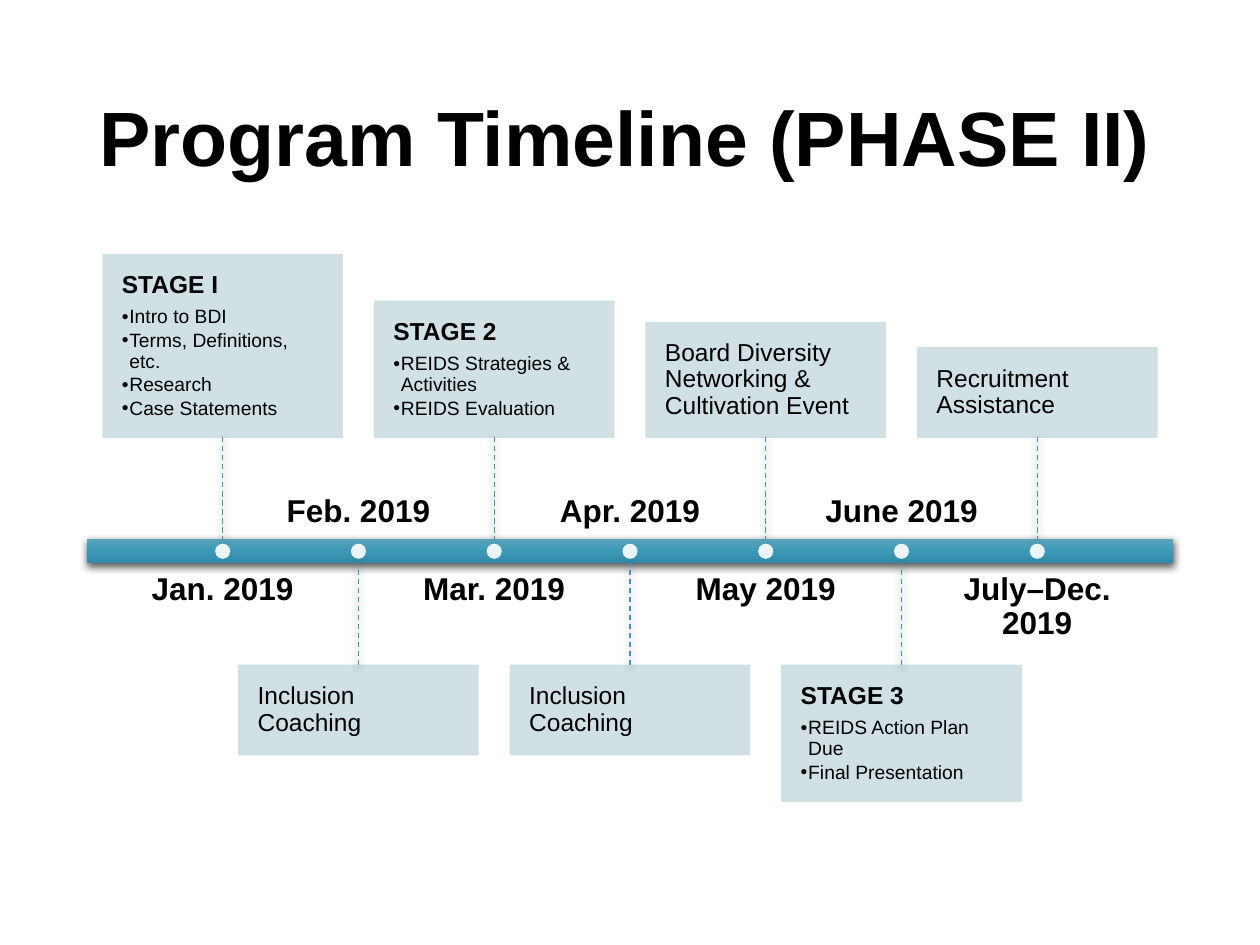
from copy import deepcopy

from pptx import Presentation
from pptx.dml.color import RGBColor
from pptx.enum.dml import MSO_LINE
from pptx.enum.shapes import MSO_CONNECTOR, MSO_SHAPE
from pptx.enum.text import MSO_ANCHOR, MSO_AUTO_SIZE, PP_ALIGN
from pptx.oxml import parse_xml
from pptx.oxml.ns import nsdecls, qn
from pptx.oxml.xmlchemy import OxmlElement
from pptx.util import Inches, Pt

RECT, OVAL = MSO_SHAPE.RECTANGLE, MSO_SHAPE.OVAL
STRAIGHT, DASH = MSO_CONNECTOR.STRAIGHT, MSO_LINE.DASH
TOP, MIDDLE, BOTTOM = MSO_ANCHOR.TOP, MSO_ANCHOR.MIDDLE, MSO_ANCHOR.BOTTOM
LEFT, CENTER = PP_ALIGN.LEFT, PP_ALIGN.CENTER

BLACK = RGBColor(0x00, 0x00, 0x00)
WHITE = RGBColor(0xFF, 0xFF, 0xFF)
CARD = RGBColor(0xCD, 0xDD, 0xE3)
STEM = RGBColor(0x42, 0x97, 0xB2)
BAR_STOPS = [(0, RGBColor(0x5C, 0xA2, 0xBB)),
             (0.5, RGBColor(0x3B, 0x99, 0xB7)),
             (1, RGBColor(0x2F, 0x89, 0xA7))]
FONT = "Arial"

BAR_X, BAR_Y, BAR_W, BAR_H = 0.69, 4.28, 8.62, 0.19
CARD_W, STEM_H, DOT = 1.9, 0.81, 0.12
LABEL_W, LABEL_H, LABEL_GAP = 1.73, 0.54, 0.08

# Date, card height, card heading, bullets; even entries stand above the bar
EVENTS = [
    ("Jan. 2019", 1.45, "STAGE I", ["Intro to BDI", "Terms, Definitions, etc.",
                                    "Research", "Case Statements"]),
    ("Feb. 2019", 0.71, "Inclusion Coaching", []),
    ("Mar. 2019", 1.08, "STAGE 2", ["REIDS Strategies & Activities",
                                    "REIDS Evaluation"]),
    ("Apr. 2019", 0.71, "Inclusion Coaching", []),
    ("May 2019", 0.91, "Board Diversity Networking & Cultivation Event", []),
    ("June 2019", 1.08, "STAGE 3", ["REIDS Action Plan Due",
                                    "Final Presentation"]),
    ("July–Dec. 2019", 0.71, "Recruitment Assistance", []),
]


def set_frame(tf, anchor, side, end):
    tf.word_wrap = True
    tf.auto_size = MSO_AUTO_SIZE.NONE
    tf.vertical_anchor = anchor
    tf.margin_left = tf.margin_right = Inches(side)
    tf.margin_top = tf.margin_bottom = Inches(end)


def write(p, text, size, bold=False, align=LEFT):
    p.text = text
    p.alignment = align
    p.line_spacing = 0.9
    font = p.runs[0].font
    font.name, font.size, font.bold = FONT, Pt(size), bold
    font.color.rgb = BLACK


def add_bullet(p):
    pPr = p._p.get_or_add_pPr()
    pPr.set("marL", str(Inches(0.06)))
    pPr.set("indent", str(Inches(-0.08)))
    color = OxmlElement("a:buClr")
    rgb = OxmlElement("a:srgbClr")
    rgb.set("val", str(BLACK))
    color.append(rgb)
    font = OxmlElement("a:buFont")
    font.set("typeface", FONT)
    bullet = OxmlElement("a:buChar")
    bullet.set("char", "•")
    pPr.extend([color, font, bullet])


def set_alpha(fill):
    """Make a solid fill 90% opaque."""
    alpha = OxmlElement("a:alpha")
    alpha.set("val", "90000")
    fill._xPr.find(qn("a:solidFill"))[0].append(alpha)


def add_shadow(shape):
    shape._element.spPr.append(parse_xml(
        f'<a:effectLst {nsdecls("a")}><a:outerShdw blurRad="{Pt(4.5)}" '
        f'dist="{Pt(1.5)}" dir="5400000" rotWithShape="0">'
        '<a:srgbClr val="000000"><a:alpha val="63000"/></a:srgbClr>'
        '</a:outerShdw></a:effectLst>'))


def add_plain(slide, kind, x, y, w, h, color):
    s = slide.shapes.add_shape(kind, Inches(x), Inches(y), Inches(w), Inches(h))
    s.shadow.inherit = False
    s.fill.solid()
    s.fill.fore_color.rgb = color
    set_alpha(s.fill)
    s.line.fill.background()
    return s


def set_title(slide, x, y, w, h):
    title = slide.shapes.title
    title.left, title.top = Inches(x), Inches(y)
    title.width, title.height = Inches(w), Inches(h)
    set_frame(title.text_frame, MIDDLE, 0.1, 0.05)
    write(title.text_frame.paragraphs[0], "Program Timeline (PHASE II)", 44, True)


def add_bar(slide, x, y, w, h):
    bar = slide.shapes.add_shape(RECT, Inches(x), Inches(y), Inches(w), Inches(h))
    bar.fill.gradient()
    bar.fill.gradient_angle = 270
    stops = bar._element.spPr.find(qn("a:gradFill")).find(qn("a:gsLst"))
    stops.insert(1, deepcopy(stops[0]))
    for stop, (position, color) in zip(bar.fill.gradient_stops, BAR_STOPS):
        stop.position = position
        stop.color.rgb = color
    bar.line.fill.background()
    add_shadow(bar)


def add_card(slide, x, y, w, h, heading, bullets):
    card = add_plain(slide, RECT, x, y, w, h, CARD)
    card.line.color.rgb = CARD
    card.line.width = Pt(0.75)
    set_alpha(card.line.fill)
    tf = card.text_frame
    set_frame(tf, MIDDLE, 0.15, 0.15)
    write(tf.paragraphs[0], heading, 14, bold=bool(bullets))
    for i, text in enumerate(bullets):
        p = tf.add_paragraph()
        p.level = 1
        write(p, text, 11)
        p.space_before = Pt(1.6 if i else 4.9)
        add_bullet(p)
    return card


def add_date(slide, x, y, w, h, text, anchor):
    tf = slide.shapes.add_textbox(
        Inches(x), Inches(y), Inches(w), Inches(h)).text_frame
    set_frame(tf, anchor, 0, 0)
    write(tf.paragraphs[0], text, 18, True, CENTER)


def add_stem(slide, card, site, x, card_y, bar_y):
    stem = slide.shapes.add_connector(
        STRAIGHT, Inches(x), Inches(card_y), Inches(x), Inches(bar_y))
    stem.begin_connect(card, site)
    stem.end_x = stem.begin_x
    stem.line.color.rgb = STEM
    stem.line.width = Pt(0.75)
    stem.line.dash_style = DASH
    add_shadow(stem)


def add_timeline(slide, x, y, w, h):
    add_bar(slide, x, y, w, h)
    step = w / (len(EVENTS) + 1)
    above_y, below_y = y - LABEL_GAP - LABEL_H, y + h + LABEL_GAP
    for i, (date, card_h, heading, bullets) in enumerate(EVENTS):
        cx = x + step * (i + 1)
        if i % 2 == 0:  # card above, date below
            edge, bar_edge, site = y - STEM_H, y, 2
            card_y, date_y, anchor = edge - card_h, below_y, TOP
        else:  # card below, date above
            edge, bar_edge, site = y + h + STEM_H, y + h, 0
            card_y, date_y, anchor = edge, above_y, BOTTOM
        card = add_card(slide, cx - CARD_W / 2, card_y, CARD_W, card_h,
                        heading, bullets)
        add_stem(slide, card, site, cx, edge, bar_edge)
        add_date(slide, cx - LABEL_W / 2, date_y, LABEL_W, LABEL_H, date, anchor)
        add_plain(slide, OVAL, cx - DOT / 2, y + (h - DOT) / 2, DOT, DOT, WHITE)


def main():
    prs = Presentation()
    prs.slide_width, prs.slide_height = Inches(10), Inches(7.5)
    slide = prs.slides.add_slide(prs.slide_layouts[5])
    set_title(slide, 0.69, 0.4, 8.62, 1.45)
    add_timeline(slide, BAR_X, BAR_Y, BAR_W, BAR_H)
    prs.save("out.pptx")


if __name__ == "__main__":
    main()
